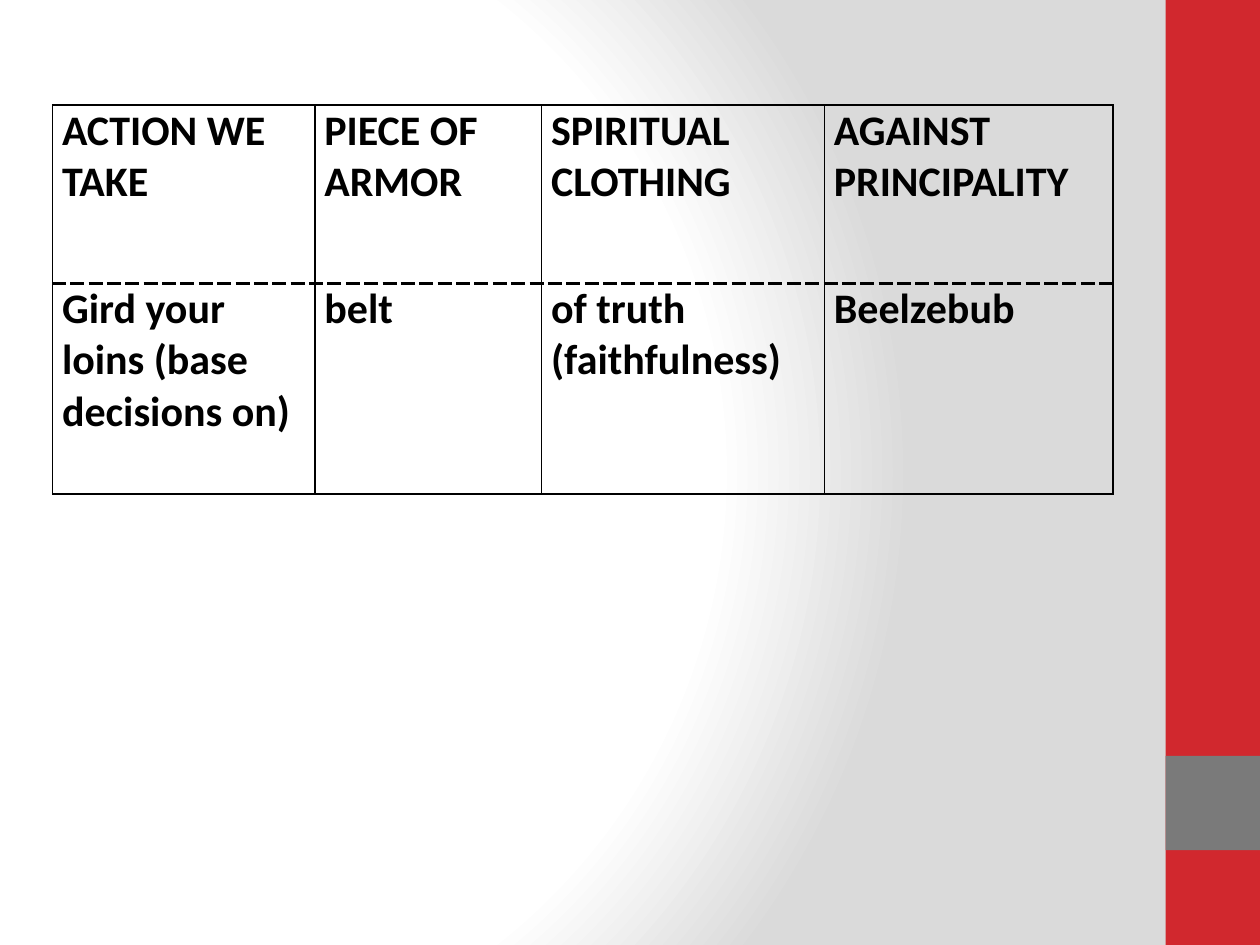
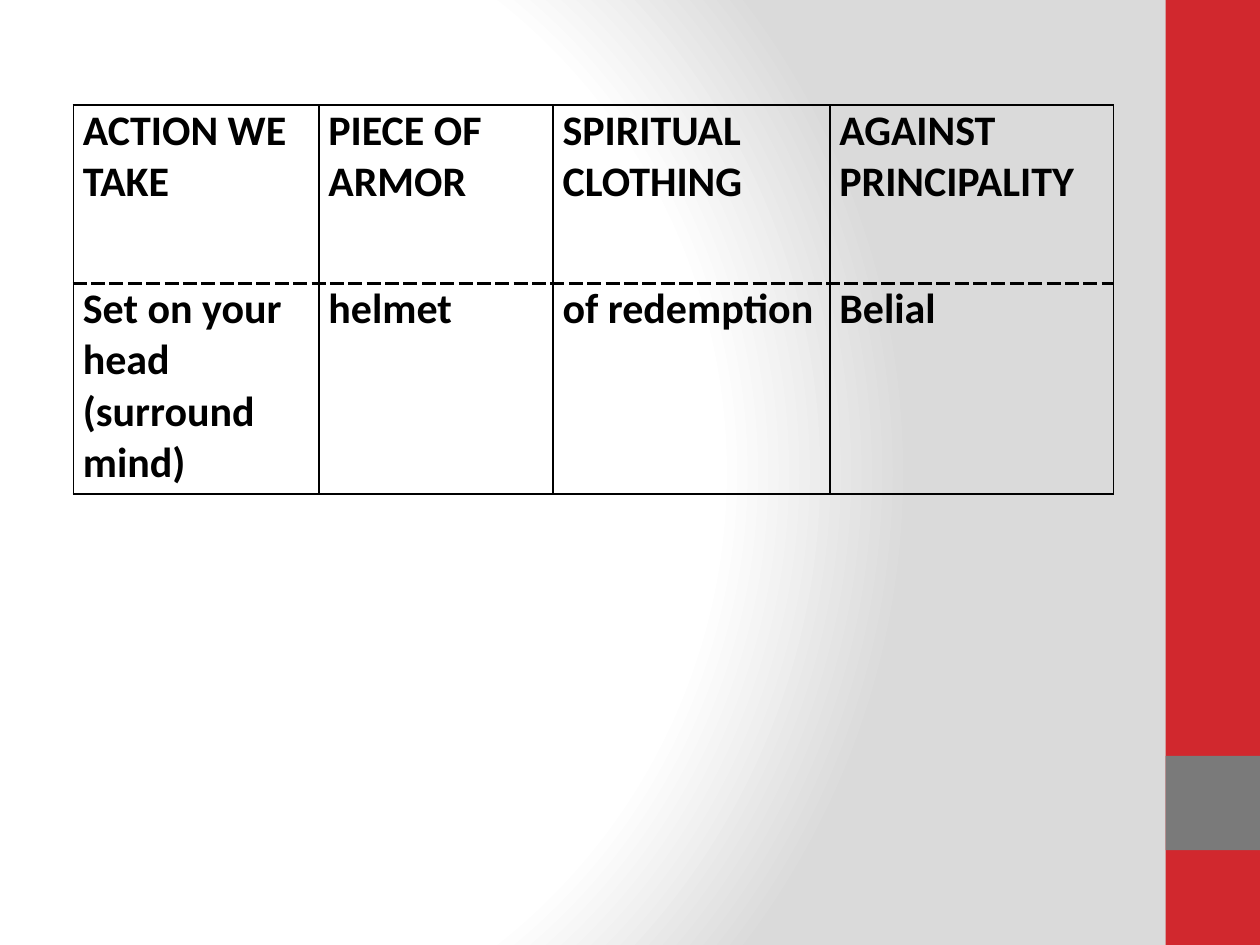
from pptx import Presentation
from pptx.dml.color import RGBColor
from pptx.enum.shapes import MSO_SHAPE as Shape
from pptx.oxml import parse_xml
from pptx.oxml.ns import nsdecls
from pptx.util import Cm, Pt

COLORS = {
    "paper": "FFFFFF",
    "shade": "DADADA",
    "band": "D1282E",
    "block": "7A7A7A",
    "ink": "000000",
}
FONT = "Calibri"
WIDTH, HEIGHT = 25.4, 19.05
BAND_WIDTH = 1.9
TABLE_TOP = 2.12
ROW_HEIGHTS = (3.6, 4.24)
HEADERS = ("ACTION WE TAKE", "PIECE OF ARMOR", "SPIRITUAL CLOTHING", "AGAINST PRINCIPALITY")

# Border styles: width in points and dash
THIN = (1, "solid")
DASHED = (2.25, "sysDash")

# Each slide: left edge of the table, column widths, answers
ARMOR_SLIDES = (
    (1.06, (5.29, 4.57, 5.7, 5.82),
     ("Gird your loins (base decisions on)", "belt", "of truth (faithfulness)", "Beelzebub")),
    (1.48, (4.95, 4.72, 5.58, 5.72),
     ("Set on your head (surround mind)", "helmet", "of redemption", "Belial")),
)


def set_background(slide):
    stops = ((0, "paper"), (75, "paper"), (100, "shade"))
    stop_xml = "".join(
        f'<a:gs pos="{position * 1000}"><a:srgbClr val="{COLORS[name]}"/></a:gs>'
        for position, name in stops
    )
    background = parse_xml(
        f'<p:bg {nsdecls("p", "a")}><p:bgPr><a:gradFill rotWithShape="1">'
        f'<a:gsLst>{stop_xml}</a:gsLst><a:path path="circle">'
        '<a:fillToRect l="20000" t="50000" r="100000" b="50000"/></a:path>'
        '</a:gradFill><a:effectLst/></p:bgPr></p:bg>'
    )
    slide.element.cSld.insert(0, background)


def add_band(slide, top, height, color):
    band = slide.shapes.add_shape(
        Shape.RECTANGLE, Cm(WIDTH - BAND_WIDTH), Cm(top), Cm(BAND_WIDTH), Cm(height))
    band.shadow.inherit = False
    band.fill.solid()
    band.fill.fore_color.rgb = RGBColor.from_string(COLORS[color])
    band.line.fill.background()


def set_borders(cell, top, bottom):
    properties = cell._tc.get_or_add_tcPr()
    sides = (("lnL", THIN), ("lnR", THIN), ("lnT", top), ("lnB", bottom))
    for index, (side, (width, dash)) in enumerate(sides):
        properties.insert(index, parse_xml(
            f'<a:{side} {nsdecls("a")} w="{Pt(width)}">'
            f'<a:solidFill><a:srgbClr val="{COLORS["ink"]}"/></a:solidFill>'
            f'<a:prstDash val="{dash}"/></a:{side}>'))


def fill_cell(cell, text):
    cell.text = text
    cell.fill.background()
    cell.margin_left = cell.margin_right = Cm(0.19)
    cell.margin_top = cell.margin_bottom = 0
    font = cell.text_frame.paragraphs[0].font
    font.name, font.size, font.bold = FONT, Pt(24), True
    font.color.rgb = RGBColor.from_string(COLORS["ink"])


def add_armor_table(slide, left, widths, answers):
    rows = (HEADERS, answers)
    table = slide.shapes.add_table(
        len(rows), len(widths), Cm(left), Cm(TABLE_TOP),
        Cm(sum(widths)), Cm(sum(ROW_HEIGHTS))).table
    table.first_row = table.horz_banding = False
    for column, width in zip(table.columns, widths):
        column.width = Cm(width)
    for row, height in zip(table.rows, ROW_HEIGHTS):
        row.height = Cm(height)
    # The dashed rule separates headers from answers
    borders = ((THIN, DASHED), (DASHED, THIN))
    for row, texts, (top, bottom) in zip(table.rows, rows, borders):
        for cell, text in zip(row.cells, texts):
            fill_cell(cell, text)
            set_borders(cell, top, bottom)


def main():
    presentation = Presentation()
    presentation.slide_width, presentation.slide_height = Cm(WIDTH), Cm(HEIGHT)
    for left, widths, answers in ARMOR_SLIDES:
        slide = presentation.slides.add_slide(presentation.slide_layouts[6])
        set_background(slide)
        # Side band with its grey block
        add_band(slide, 0, HEIGHT, "band")
        add_band(slide, 15.24, BAND_WIDTH, "block")
        add_armor_table(slide, left, widths, answers)
    presentation.save("out.pptx")


if __name__ == "__main__":
    main()
